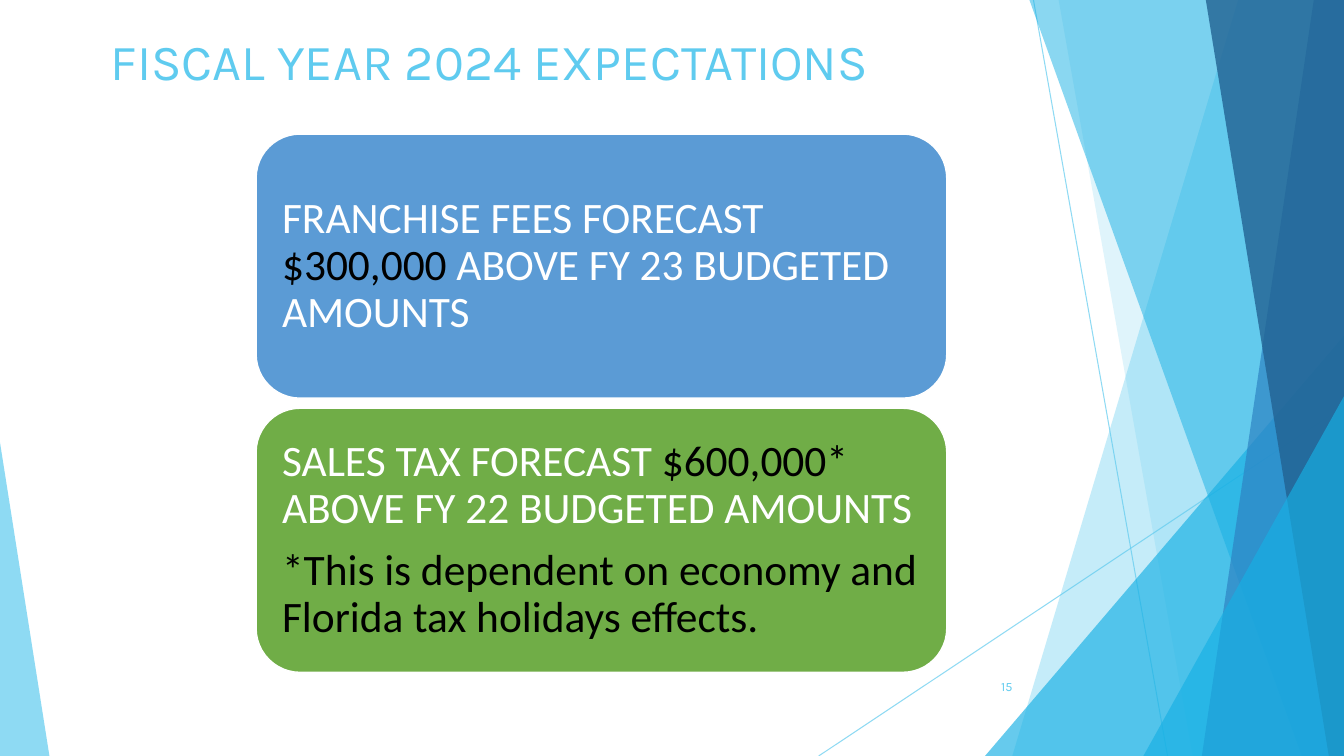
from lxml.etree import SubElement
from pptx import Presentation
from pptx.dml.color import RGBColor
from pptx.enum.shapes import MSO_CONNECTOR, MSO_SHAPE as Shape
from pptx.enum.text import MSO_ANCHOR as Anchor, PP_ALIGN as Align
from pptx.oxml.ns import qn
from pptx.util import Inches, Pt

COLORS = {
    "white": "FFFFFF", "black": "000000",
    "sky": "5FCBEF", "cyan": "17B0E4", "blue": "2E83C3", "navy": "226292",
    "franchise": "5B9BD5", "sales": "70AD47",
}
WIDTH, HEIGHT = 13.33, 7.5


class SlideBuilder:
    heading_font = "Karla"
    body_font = "Calibri"

    def __init__(self, slide):
        self.slide = slide
        self.shapes = slide.shapes

    def paint(self, fill, color, opacity=100):
        fill.solid()
        fill.fore_color.rgb = RGBColor.from_string(COLORS[color])
        if opacity < 100:
            for srgb in fill._xPr.iter(qn("a:srgbClr")):
                SubElement(srgb, qn("a:alpha"), val=str(opacity * 1000))

    def style_font(self, font, name, size, color):
        font.name, font.size = name, Pt(size)
        font.color.rgb = RGBColor.from_string(COLORS[color])

    def hairline(self, start, end):
        ray = self.shapes.add_connector(
            MSO_CONNECTOR.STRAIGHT, *(Inches(v) for v in start + end))
        ray.line.width = Pt(0.75)
        self.paint(ray.line.fill, "sky", 70)
        SubElement(ray._element.spPr, qn("a:effectLst"))

    def facet(self, top_left, bottom_left, color, opacity):
        """Band reaching from a slanted left edge to the right slide edge."""
        corners = [(top_left, 0), (WIDTH, 0), (WIDTH, HEIGHT), (bottom_left, HEIGHT)]
        points = [(Inches(x), Inches(y)) for x, y in corners]
        outline = self.shapes.build_freeform(*points[0])
        outline.add_line_segments(points[1:], close=True)
        self.finish_facet(outline.convert_to_shape(), color, opacity)

    def wedge(self, left, top, width, apex, color, opacity):
        """Triangle standing on the bottom slide edge."""
        triangle = self.shapes.add_shape(
            Shape.ISOSCELES_TRIANGLE, Inches(left), Inches(top),
            Inches(width), Inches(HEIGHT - top))
        triangle.adjustments[0] = apex
        self.finish_facet(triangle, color, opacity)

    def finish_facet(self, shape, color, opacity):
        shape.shadow.inherit = False
        shape.line.fill.background()
        self.paint(shape.fill, color, opacity)

    def title(self, text):
        heading = self.shapes.title
        heading.left, heading.top = Inches(1), Inches(0.25)
        heading.width, heading.height = Inches(11.33), Inches(1.32)
        frame = heading.text_frame
        frame.text = text
        frame.vertical_anchor = Anchor.TOP
        frame.paragraphs[0].alignment = Align.LEFT
        self.style_font(frame.paragraphs[0].font, self.heading_font, 36, "sky")

    def page_number(self, text):
        box = self.shapes.add_textbox(
            Inches(9.39), Inches(6.61), Inches(0.75), Inches(0.4))
        frame = box.text_frame
        frame.word_wrap = True
        frame.vertical_anchor = Anchor.MIDDLE
        frame.text = text
        frame.paragraphs[0].alignment = Align.RIGHT
        self.style_font(frame.paragraphs[0].font, self.heading_font, 9, "sky")

    def card(self, top, color, paragraphs):
        panel = self.shapes.add_shape(
            Shape.ROUNDED_RECTANGLE, Inches(2.54), Inches(top),
            Inches(6.85), Inches(2.62))
        panel.shadow.inherit = False
        self.paint(panel.fill, color)
        self.paint(panel.line.fill, "white")
        panel.line.width = Pt(1)
        frame = panel.text_frame
        frame.word_wrap = True
        frame.vertical_anchor = Anchor.MIDDLE
        frame.margin_left = frame.margin_right = Inches(0.13)
        frame.margin_top = frame.margin_bottom = Inches(0.13)
        for index, runs in enumerate(paragraphs):
            paragraph = frame.add_paragraph() if index else frame.paragraphs[0]
            paragraph.alignment = Align.LEFT
            paragraph.line_spacing = 0.9
            paragraph.space_after = Pt(11)
            self.style_font(paragraph.font, self.body_font, 31, runs[0][1])
            for text, run_color in runs:
                run = paragraph.add_run()
                run.text = text
                run.font.color.rgb = RGBColor.from_string(COLORS[run_color])


def main():
    deck = Presentation()
    deck.slide_width, deck.slide_height = Inches(WIDTH), Inches(HEIGHT)
    builder = SlideBuilder(deck.slides.add_slide(deck.slide_layouts[5]))

    # Faceted backdrop, from back to front
    builder.hairline((10.25, 0), (11.58, HEIGHT))
    builder.hairline((WIDTH, 4.03), (8.12, HEIGHT))
    builder.facet(12.28, 10.04, "sky", 36)
    builder.facet(10.5, 11.83, "sky", 20)
    builder.wedge(9.77, 3.33, 3.56, 1, "cyan", 66)
    builder.facet(10.21, 12.91, "cyan", 50)
    builder.facet(13.03, 11.92, "blue", 70)
    builder.facet(11.96, 13.18, "navy", 80)
    builder.wedge(11.34, 3.93, 1.99, 1, "cyan", 66)
    builder.wedge(0, 4.39, 0.49, 0, "sky", 70)

    # Heading and page number
    builder.title("FISCAL YEAR 2024 EXPECTATIONS")
    builder.page_number("15")

    # Forecast cards
    builder.card(1.33, "franchise", [
        [("FRANCHISE FEES FORECAST ", "white"), ("$300,000 ", "black"),
         ("ABOVE FY 23 BUDGETED AMOUNTS", "white")],
    ])
    builder.card(4.05, "sales", [
        [("SALES TAX FORECAST ", "white"), ("$600,000* ", "black"),
         ("ABOVE FY 22 BUDGETED AMOUNTS", "white")],
        [("*This is dependent on economy and Florida tax holidays effects.", "black")],
    ])

    deck.save("out.pptx")


if __name__ == "__main__":
    main()
